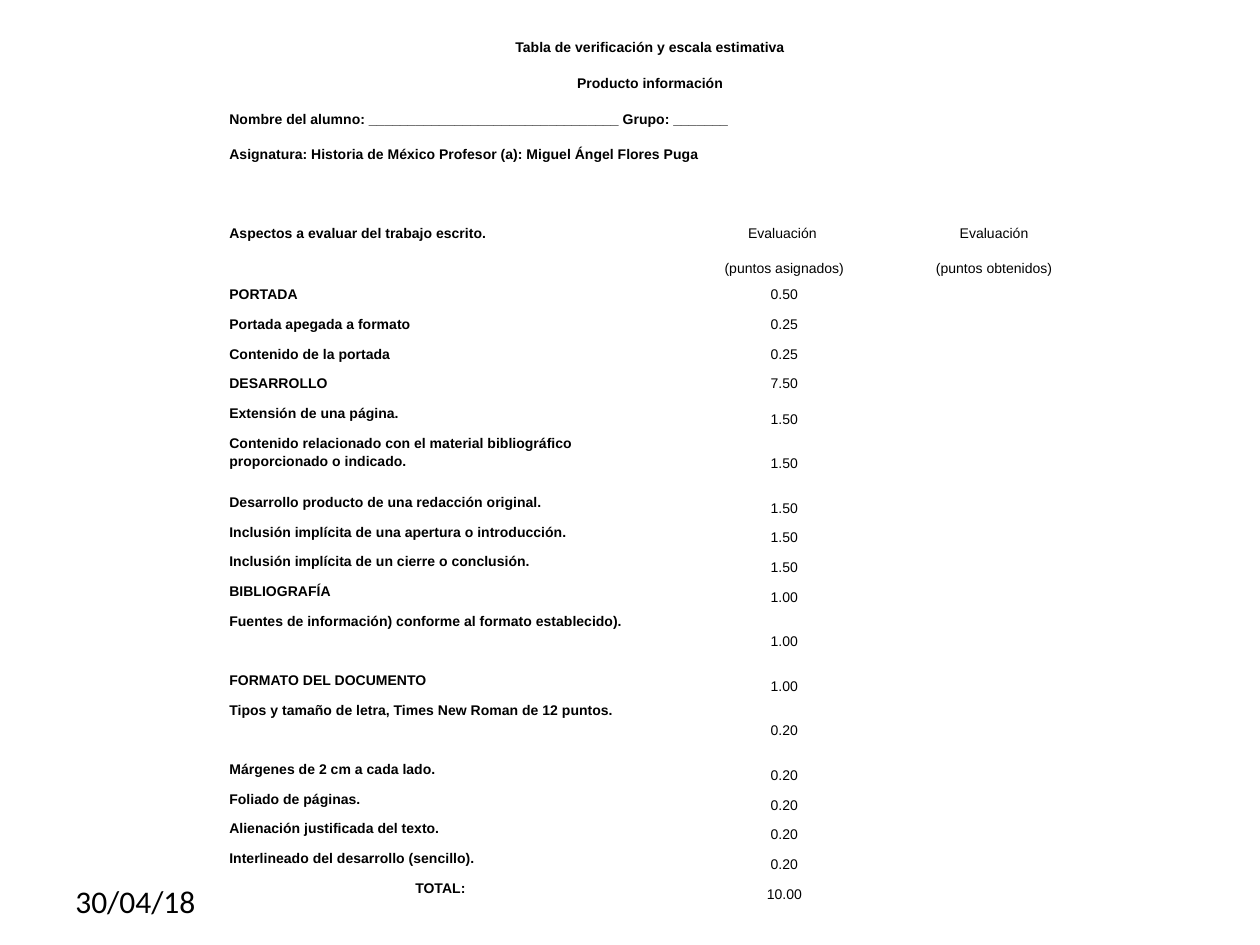
"""Build a grading checklist slide for a written assignment."""
from dataclasses import dataclass

from lxml import etree
from pptx import Presentation
from pptx import util as u
from pptx.dml import color
from pptx.enum import text
from pptx.oxml import ns


@dataclass(frozen=True)
class Theme:
    """Hold the fonts, type sizes and colours."""
    font: str = "Arial"
    face: str = "Calibri"
    size: int = 8
    date: int = 18
    ink: str = "000000"
    paper: str = "FFFFFF"
    alpha: int = 20


THEME = Theme()
LEFT, MID = text.PP_ALIGN.LEFT, text.PP_ALIGN.CENTER
HEAD = [
    ("Tabla de verificación y escala estimativa", MID),
    ("Producto información", MID),
    ("Nombre del alumno: ________________________________ Grupo: _______", LEFT),
    ("Asignatura: Historia de México Profesor (a): Miguel Ángel Flores Puga", LEFT),
]
TITLES = [
    "Aspectos a evaluar del trabajo escrito.",
    "Evaluación \n(puntos asignados)",
    "Evaluación\n(puntos obtenidos)",
]
ITEMS = [
    ("PORTADA", "0.50", 1),
    ("Portada apegada a formato", "0.25", 1),
    ("Contenido de la portada", "0.25", 1),
    ("DESARROLLO", "7.50", 1),
    ("Extensión de una página.", "1.50", 1),
    ("Contenido relacionado con el material bibliográfico proporcionado o indicado.",
     "1.50", 2),
    ("Desarrollo producto de una redacción original.", "1.50", 1),
    ("Inclusión implícita de una apertura o introducción.", "1.50", 1),
    ("Inclusión implícita de un cierre o conclusión.", "1.50", 1),
    ("BIBLIOGRAFÍA", "1.00", 1),
    ("Fuentes de información) conforme al formato establecido).", "1.00", 2),
    ("FORMATO DEL DOCUMENTO", "1.00", 1),
    ("Tipos y tamaño de letra, Times New Roman de 12 puntos.", "0.20", 2),
    ("Márgenes de 2 cm a cada lado.", "0.20", 1),
    ("Foliado de páginas.", "0.20", 1),
    ("Alienación justificada del texto.", "0.20", 1),
    ("Interlineado del desarrollo (sencillo).", "0.20", 1),
    ("TOTAL:", "10.00", 1),
]
WIDTHS = [3.45, 2.01, 1.32]
HIGH, TOP, SUB = 6.91, 1.47, 0.49


def style(run, face, size, bold=False):
    """Set the font of one run."""
    font = run.font
    font.name, font.size, font.bold = face, u.Pt(size), bold
    font.color.rgb = color.RGBColor.from_string(THEME.ink)


def write(cell, words, align=LEFT, bold=False):
    """Fill a cell with spaced paragraphs."""
    cell.margin_left = cell.margin_right = u.Inches(0.05)
    cell.margin_top = cell.margin_bottom = 0
    cell.text_frame.text = words
    for para in cell.text_frame.paragraphs:
        para.alignment = align
        para.line_spacing, para.space_after = 1.15, u.Pt(10)
        for run in para.runs:
            style(run, THEME.font, THEME.size, bold)
        if not para.runs:
            end = etree.SubElement(para._p, ns.qn("a:endParaRPr"))
            end.set("sz", str(THEME.size * 100))


def edge(cell, side):
    """Draw a thin border on one side of a cell."""
    line = etree.SubElement(cell._tc.get_or_add_tcPr(), ns.qn(f"a:ln{side}"))
    line.set("w", str(u.Pt(1)))
    fill = etree.SubElement(line, ns.qn("a:solidFill"))
    etree.SubElement(fill, ns.qn("a:srgbClr")).set("val", THEME.paper)


def tint(cell, band):
    """Give a banded cell a sheer fill and clear any other."""
    if not band:
        cell.fill.background()
        return
    cell.fill.solid()
    cell.fill.fore_color.rgb = color.RGBColor.from_string(THEME.paper)
    tone = next(cell._tc.tcPr.iterchildren(ns.qn("a:solidFill")))[0]
    etree.SubElement(tone, ns.qn("a:alpha")).set("val", str(THEME.alpha * 1000))


def add_grid(slide):
    """Add the checklist table."""
    count = len(ITEMS) + 2
    frame = slide.shapes.add_table(
        count, 3, u.Inches(1.77), u.Inches(0.3),
        u.Inches(sum(WIDTHS)), u.Inches(HIGH))
    grid = frame.table
    grid.first_row = grid.horz_banding = False
    for col, width in zip(grid.columns, WIDTHS):
        col.width = u.Inches(width)
    unit = (HIGH - TOP - SUB) / sum(item[2] for item in ITEMS)
    highs = [TOP, SUB] + [unit * item[2] for item in ITEMS]
    for row, high in zip(grid.rows, highs):
        row.height = u.Inches(high)

    grid.cell(0, 0).merge(grid.cell(0, 2))
    write(grid.cell(0, 0), "\n".join(line for line, _ in HEAD), bold=True)
    for para, (_, align) in zip(grid.cell(0, 0).text_frame.paragraphs, HEAD):
        para.alignment = align
    lines = [TITLES] + [[name, mark, ""] for name, mark, _ in ITEMS]
    for i, line in enumerate(lines, 1):
        for j, words in enumerate(line):
            side = MID if j or words == "TOTAL:" else LEFT
            write(grid.cell(i, j), words, side, bold=j == 0)
        if i > 5:
            grid.cell(i, 1).vertical_anchor = text.MSO_ANCHOR.MIDDLE

    for j in range(3):
        edge(grid.cell(0, j), "T")
        edge(grid.cell(0, j), "B")
        edge(grid.cell(count - 1, j), "B")
        for i in range(count):
            tint(grid.cell(i, j), i % 2)


def add_date(slide):
    """Add the date at the foot of the slide."""
    box = slide.shapes.add_textbox(
        u.Inches(0.5), u.Inches(6.95), u.Inches(2.33), u.Inches(0.4))
    frame = box.text_frame
    frame.word_wrap = True
    frame.vertical_anchor = text.MSO_ANCHOR.MIDDLE
    frame.text = "30/04/18"
    style(frame.paragraphs[0].runs[0], THEME.face, THEME.date)


def main():
    """Build and save the slide."""
    deck = Presentation()
    deck.slide_width, deck.slide_height = u.Inches(10), u.Inches(7.5)
    slide = deck.slides.add_slide(deck.slide_layouts[6])
    add_grid(slide)
    add_date(slide)
    deck.save("out.pptx")


if __name__ == "__main__":
    main()
